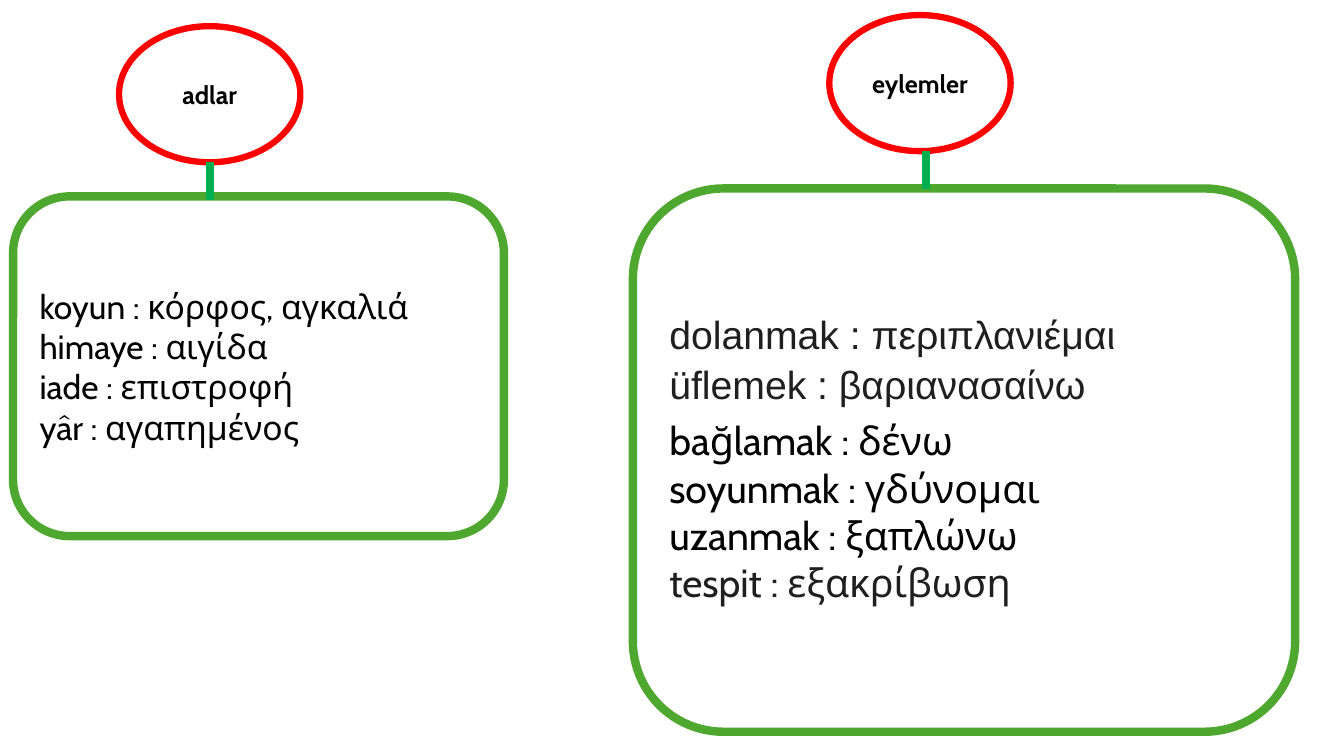
from pptx import Presentation
from pptx.dml.color import RGBColor
from pptx.enum.shapes import MSO_CONNECTOR, MSO_SHAPE
from pptx.enum.text import MSO_ANCHOR, PP_ALIGN
from pptx.oxml.ns import qn
from pptx.util import Cm, Pt
from lxml import etree

COLORS = {
    "white": "FFFFFF",
    "black": "000000",
    "charcoal": "1F1F1F",
    "frame": "4EA72E",
    "oval": "FF0000",
    "stem": "00B050",
}
OVAL_W, OVAL_H, STEM_H = 4.57, 3.43, 0.94

NOUNS = [
    ("koyun : κόρφος, αγκαλιά", "Cabin", "black"),
    ("himaye : αιγίδα", "Cabin", "black"),
    ("iade : επιστροφή", "Cabin", "black"),
    ("yâr : αγαπημένος", "Cabin", "black"),
]
VERBS = [
    ("dolanmak : περιπλανιέμαι", "Arial", "charcoal"),
    ("üflemek : βαριανασαίνω", "Arial", "charcoal"),
    ("bağlamak : δένω", "Cabin", "black"),
    ("soyunmak : γδύνομαι", "Cabin", "black"),
    ("uzanmak : ξαπλώνω", "Cabin", "black"),
    ("tespit : εξακρίβωση", "Cabin", "charcoal"),
]


def rgb(name):
    return RGBColor.from_string(COLORS[name])


def add_outlined(slide, kind, box, line, width):
    """Add a white preset shape with a coloured outline; box is in cm."""
    sp = slide.shapes.add_shape(kind, *(Cm(v) for v in box))
    sp.shadow.inherit = False
    sp.fill.solid()
    sp.fill.fore_color.rgb = rgb("white")
    sp.line.color.rgb = rgb(line)
    sp.line.width = Pt(width)
    sp.text_frame.word_wrap = True
    sp.text_frame.vertical_anchor = MSO_ANCHOR.MIDDLE
    return sp


def style(p, font, size, color, align, bold=False):
    p.alignment = align
    p.font.name = font
    p.font.size = Pt(size)
    p.font.bold = bold
    p.font.color.rgb = rgb(color)


def add_word_list(slide, box, words, size):
    tf = add_outlined(slide, MSO_SHAPE.ROUNDED_RECTANGLE, box, "frame", 6).text_frame
    for i, (text, font, color) in enumerate(words):
        p = tf.paragraphs[0] if i == 0 else tf.add_paragraph()
        p.text = text
        style(p, font, size, color, PP_ALIGN.LEFT)
        if font == "Arial":
            p.line_spacing = 0.9
            p.space_after = Pt(6)


def add_heading(slide, left, top, text):
    box = (left, top, OVAL_W, OVAL_H)
    sp = add_outlined(slide, MSO_SHAPE.OVAL, box, "oval", 4.5)
    p = sp.text_frame.paragraphs[0]
    p.text = text
    style(p, "Cabin", 18, "black", PP_ALIGN.CENTER, bold=True)


def add_stem(slide, x, top):
    line = slide.shapes.add_connector(
        MSO_CONNECTOR.STRAIGHT, Cm(x), Cm(top), Cm(x), Cm(top + STEM_H))
    line.line.color.rgb = rgb("stem")
    line.line.width = Pt(6)
    etree.SubElement(line._element.spPr, qn("a:effectLst"))


def add_word_group(slide, box, heading, words, size, oval_dx, oval_rise, stem_shift=0):
    """Place a word list in box, its oval heading above and the stem between."""
    left, top = box[0] + oval_dx, box[1] - oval_rise
    add_word_list(slide, box, words, size)
    add_heading(slide, left, top, heading)
    add_stem(slide, left + OVAL_W / 2 + stem_shift, top + OVAL_H)


def main():
    prs = Presentation()
    prs.slide_width, prs.slide_height = Cm(33.87), Cm(19.05)
    slide = prs.slides.add_slide(prs.slide_layouts[6])
    add_word_group(slide, (0.33, 4.95, 12.37, 8.56), "adlar", NOUNS, 24, 2.67, 4.29)
    add_word_group(slide, (15.95, 4.75, 16.69, 13.69), "eylemler", VERBS, 28,
                   4.95, 4.37, stem_shift=0.15)
    prs.save("out.pptx")


if __name__ == "__main__":
    main()
